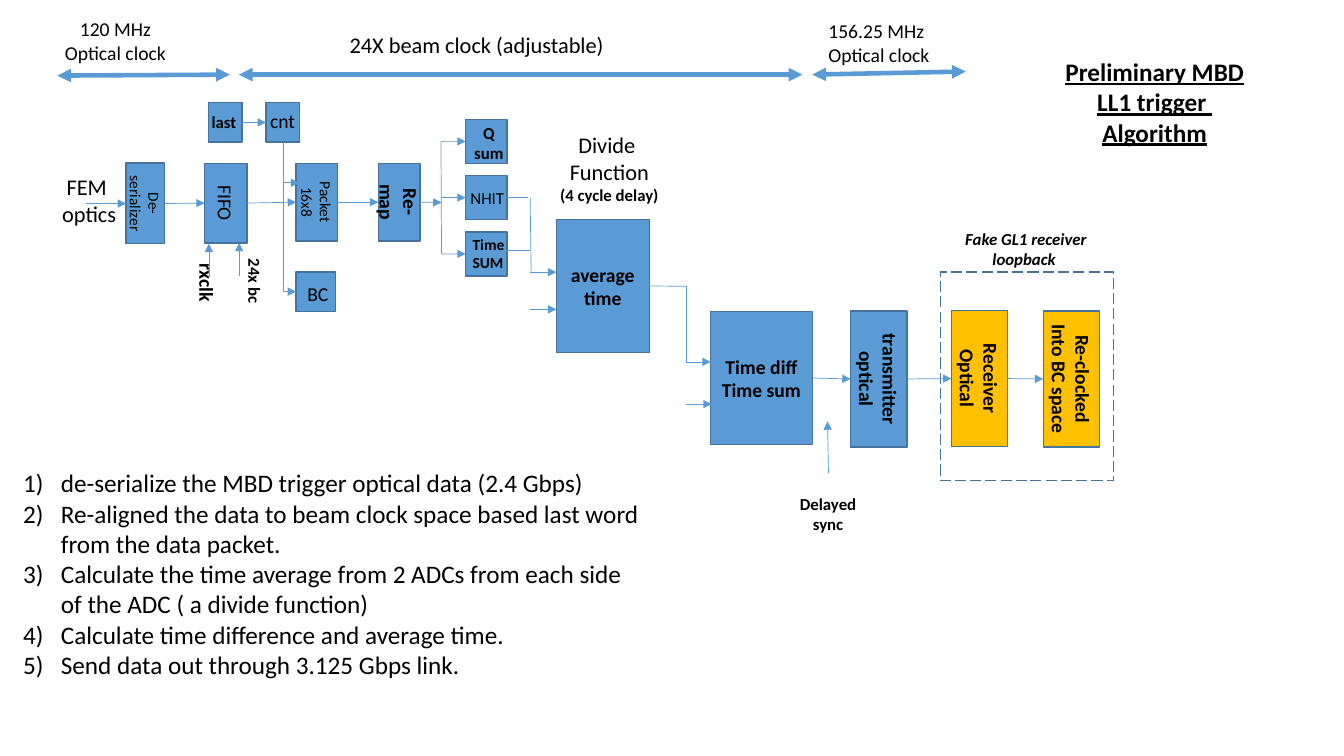
"""Build the block diagram slide of the MBD LL1 trigger algorithm."""
import pptx
import pptx.dml.color
import pptx.enum.dml
import pptx.enum.shapes
import pptx.enum.text
import pptx.oxml.ns
import pptx.oxml.xmlchemy
import pptx.util

Pt = pptx.util.Pt
qn = pptx.oxml.ns.qn
new_element = pptx.oxml.xmlchemy.OxmlElement
color = pptx.dml.color.RGBColor.from_string
RECTANGLE = pptx.enum.shapes.MSO_SHAPE.RECTANGLE
CONNECTOR = pptx.enum.shapes.MSO_CONNECTOR
LEFT = pptx.enum.text.PP_ALIGN.LEFT
CENTER = pptx.enum.text.PP_ALIGN.CENTER
SIDE_LEFT, SIDE_RIGHT = 1, 3
BLUE, OUTLINE, ORANGE, BLACK = "5B9BD5", "43739E", "FFC000", "000000"

deck = pptx.Presentation()
deck.slide_width, deck.slide_height = Pt(960), Pt(540)
page = deck.slides.add_slide(deck.slide_layouts[6])


def write_text(shape, text, size, style="", align=CENTER, vertical=False):
    for number, line in enumerate(text.split("\n")):
        frame = shape.text_frame
        para = frame.add_paragraph() if number else frame.paragraphs[0]
        para.text = line
        para.alignment = align
        para.font.name = "Calibri"
        para.font.size = Pt(size)
        para.font.bold = "b" in style
        para.font.italic = "i" in style
        para.font.underline = "u" in style
        para.font.color.rgb = color(BLACK)
    if vertical:
        shape.element.find(".//" + qn("a:bodyPr")).set("vert", "vert")


def finish_line(line, width, arrows):
    line.line.color.rgb = color(BLUE)
    line.line.width = Pt(width)
    properties = line.element.find(qn("p:spPr"))
    for arrow in arrows:
        tag = new_element("a:" + arrow)
        tag.set("type", "triangle")
        properties.find(qn("a:ln")).append(tag)
    properties.append(new_element("a:effectLst"))


blocks = [
    ("deserializer", 90, 116.6, 27.4, 57.6, BLUE, "De-serializer", 11, "", True),
    ("fifo", 146.2, 116.6, 30.2, 56.9, BLUE, "FIFO", 14, "", True),
    ("packet", 211.5, 116.6, 29.5, 55.6, BLUE, "Packet\n16x8", 11, "", True),
    ("remap", 270.2, 116.6, 29.8, 55.6, BLUE, "Re-map", 14, "b", True),
    ("last", 149, 73.4, 24, 28.1, BLUE, "", 12, "", False),
    ("count", 190, 73.4, 24, 28.1, BLUE, "", 14, "", False),
    ("bc", 211.5, 194.4, 28.3, 28.1, BLUE, "", 14, "", False),
    ("charge", 332.6, 85.2, 29.6, 31.5, BLUE, "", 12, "", False),
    ("nhit", 332.6, 125.4, 29.6, 31.5, BLUE, "", 12, "", False),
    ("time", 332.6, 165.6, 29.6, 31.5, BLUE, "", 12, "", False),
    ("average", 397.4, 156.8, 66.4, 95, BLUE, "average\ntime", 14, "b", False),
    ("difference", 507.6, 222.6, 72.6, 94.8, BLUE, "Time diff\nTime sum", 14, "b", False),
    ("transmitter", 607.6, 222.2, 40.2, 97, BLUE, "transmitter\noptical", 14, "b", True),
    ("receiver", 679.6, 221.9, 40.2, 97, ORANGE, "Receiver\nOptical", 14, "b", True),
    ("reclocked", 745.2, 222.2, 40.2, 97, ORANGE, "Re-clocked\nInto BC space", 14, "b", True),
    ("loopback", 671.8, 194.4, 123.6, 149, None, "", 12, "", False),
]
boxes = {}
for name, left, top, width, height, fill, text, size, style, vertical in blocks:
    box = page.shapes.add_shape(RECTANGLE, Pt(left), Pt(top), Pt(width), Pt(height))
    box.shadow.inherit = False
    box.line.color.rgb = color(OUTLINE)
    box.line.width = Pt(1)
    if fill:
        box.fill.solid()
        box.fill.fore_color.rgb = color(fill)
    else:
        box.fill.background()
        box.line.dash_style = pptx.enum.dml.MSO_LINE.LONG_DASH
    if text:
        write_text(box, text, size, style, CENTER, vertical)
    boxes[name] = box

ARROW, PLAIN, DOUBLE = ["tailEnd"], [], ["headEnd", "tailEnd"]
lines = [
    ((61.2, 145.4), ("deserializer", SIDE_LEFT), 0.5, ARROW),
    (("deserializer", SIDE_RIGHT), ("fifo", SIDE_LEFT), 0.5, ARROW),
    (("fifo", SIDE_RIGHT), ("packet", SIDE_LEFT), 0.5, ARROW),
    (("packet", SIDE_RIGHT), ("remap", SIDE_LEFT), 0.5, ARROW),
    (("remap", SIDE_RIGHT), (315.4, 144.7), 0.5, ARROW),
    (("last", SIDE_RIGHT), ("count", SIDE_LEFT), 0.5, ARROW),
    ((202.3, 130.6), (213.8, 130.6), 0.5, ARROW),
    ((149.2, 198), (149.2, 174), 0.5, ARROW),
    ((170.8, 197.3), (170.8, 173.5), 0.5, ARROW),
    ((315, 101), (315.4, 181.4), 0.5, PLAIN),
    ((315.4, 101), ("charge", SIDE_LEFT), 0.5, ARROW),
    ((315.4, 141.1), ("nhit", SIDE_LEFT), 0.5, ARROW),
    ((315.4, 181.4), ("time", SIDE_LEFT), 0.5, ARROW),
    ((357.1, 141.1), (377.3, 141.1), 0.5, PLAIN),
    ((357.8, 178.6), (378.7, 178.6), 0.5, PLAIN),
    ((378.7, 141.1), (379.4, 194.4), 0.5, PLAIN),
    ((378.7, 194.4), (397.4, 194.4), 0.5, ARROW),
    ((378.7, 221), (397.4, 221), 0.5, ARROW),
    (("average", SIDE_RIGHT), (490.3, 204.5), 0.5, PLAIN),
    ((490.3, 258.5), (490.3, 204.5), 0.5, PLAIN),
    ((490.3, 258.5), (507.6, 258.5), 0.5, ARROW),
    ((490.3, 288.7), (508.3, 288.7), 0.5, ARROW),
    (("difference", SIDE_RIGHT), ("transmitter", SIDE_LEFT), 0.5, ARROW),
    (("transmitter", SIDE_RIGHT), ("receiver", SIDE_LEFT), 0.5, ARROW),
    (("receiver", SIDE_RIGHT), ("reclocked", SIDE_LEFT), 0.5, ARROW),
    ((591.8, 337.7), (591.1, 301), 0.5, ARROW),
    ((41, 54), (164.2, 53.3), 3.25, DOUBLE),
    ((170.6, 53.3), (573.1, 53.3), 3.25, DOUBLE),
    ((580.3, 53.3), (689.8, 51.1), 3.25, DOUBLE),
]
for start, end, width, arrows in lines:
    start_joined, end_joined = start[0] in boxes, end[0] in boxes
    start_x, start_y = (0, 0) if start_joined else start
    end_x, end_y = (0, 0) if end_joined else end
    line = page.shapes.add_connector(
        CONNECTOR.STRAIGHT, Pt(start_x), Pt(start_y), Pt(end_x), Pt(end_y))
    if start_joined:
        line.begin_connect(boxes[start[0]], start[1])
    if end_joined:
        line.end_connect(boxes[end[0]], end[1])
    finish_line(line, width, arrows)

elbow = page.shapes.add_connector(
    CONNECTOR.ELBOW, Pt(260.1), Pt(150.3), Pt(153.5), Pt(159.7))
elbow.element.find(".//" + qn("a:prstGeom")).set("prst", "bentConnector2")
elbow.element.find(".//" + qn("a:xfrm")).set("rot", "16200000")
finish_line(elbow, 0.5, ARROW)

labels = [
    (38.9, 8.6, 87.1, 41, "120 MHz\nOptical clock", 14, "", CENTER, False),
    (242.6, 18.7, 198, 26.6, "24X beam clock (adjustable)", 16, "", LEFT, False),
    (584.6, 10.1, 87.1, 41, "156.25 MHz\nOptical clock", 14, "", LEFT, False),
    (753.1, 36.7, 143.3, 72.7, "Preliminary MBD\nLL1 trigger \nAlgorithm", 18, "bu", CENTER, False),
    (36.7, 120.2, 54, 46.1, "FEM \noptics", 16, "", CENTER, False),
    (144, 76.3, 32.4, 21.6, "last", 12, "b", LEFT, False),
    (185.8, 74.2, 32.4, 24.5, "cnt", 14, "", LEFT, False),
    (212.4, 198, 29.5, 24.5, "BC", 14, "", LEFT, False),
    (128.2, 181.4, 31.7, 34.6, "rxclk", 14, "b", LEFT, True),
    (164.2, 177.8, 28.8, 39.6, "24x bc", 12, "b", LEFT, True),
    (331.2, 84.2, 36, 36, "Q\nsum", 12, "b", CENTER, False),
    (329, 130.3, 38.9, 21.6, "NHIT", 12, "", LEFT, False),
    (330.5, 164.2, 37.4, 33.8, "Time\nSUM", 11, "b", LEFT, False),
    (392.4, 90, 85.7, 60.5, "Divide \nFunction\n(4 cycle delay)", 16, "", CENTER, False),
    (563.8, 349.2, 55.4, 36, "Delayed\nsync", 12, "b", CENTER, False),
    (681.8, 159.8, 102.2, 36, "Fake GL1 receiver\nloopback ", 12, "bi", CENTER, False),
]
for left, top, width, height, text, size, style, align, vertical in labels:
    label = page.shapes.add_textbox(Pt(left), Pt(top), Pt(width), Pt(height))
    label.text_frame.word_wrap = False
    label.text_frame.auto_size = pptx.enum.text.MSO_AUTO_SIZE.SHAPE_TO_FIT_TEXT
    write_text(label, text, size, style, align, vertical)
    if text.startswith("Divide"):
        delay = label.text_frame.paragraphs[-1]
        delay.font.size = Pt(12)
        delay.font.bold = True

steps = [
    "de-serialize the MBD trigger optical data (2.4 Gbps)",
    "Re-aligned the data to beam clock space based last word from the data packet.",
    "Calculate the time average from 2 ADCs from each side of the ADC ( a divide function)",
    "Calculate time difference and average time.",
    "Send data out through 3.125 Gbps link.",
]
step_list = page.shapes.add_textbox(Pt(9.4), Pt(330.5), Pt(460), Pt(159.8))
step_list.text_frame.word_wrap = True
write_text(step_list, "\n".join(steps), 18, "", LEFT)
for para in step_list.text_frame.paragraphs:
    properties = para._p.get_or_add_pPr()
    properties.set("marL", str(Pt(27)))
    properties.set("indent", str(-Pt(27)))
    numbering = new_element("a:buAutoNum")
    numbering.set("type", "arabicParenR")
    properties.insert(0, numbering)

deck.save("out.pptx")
